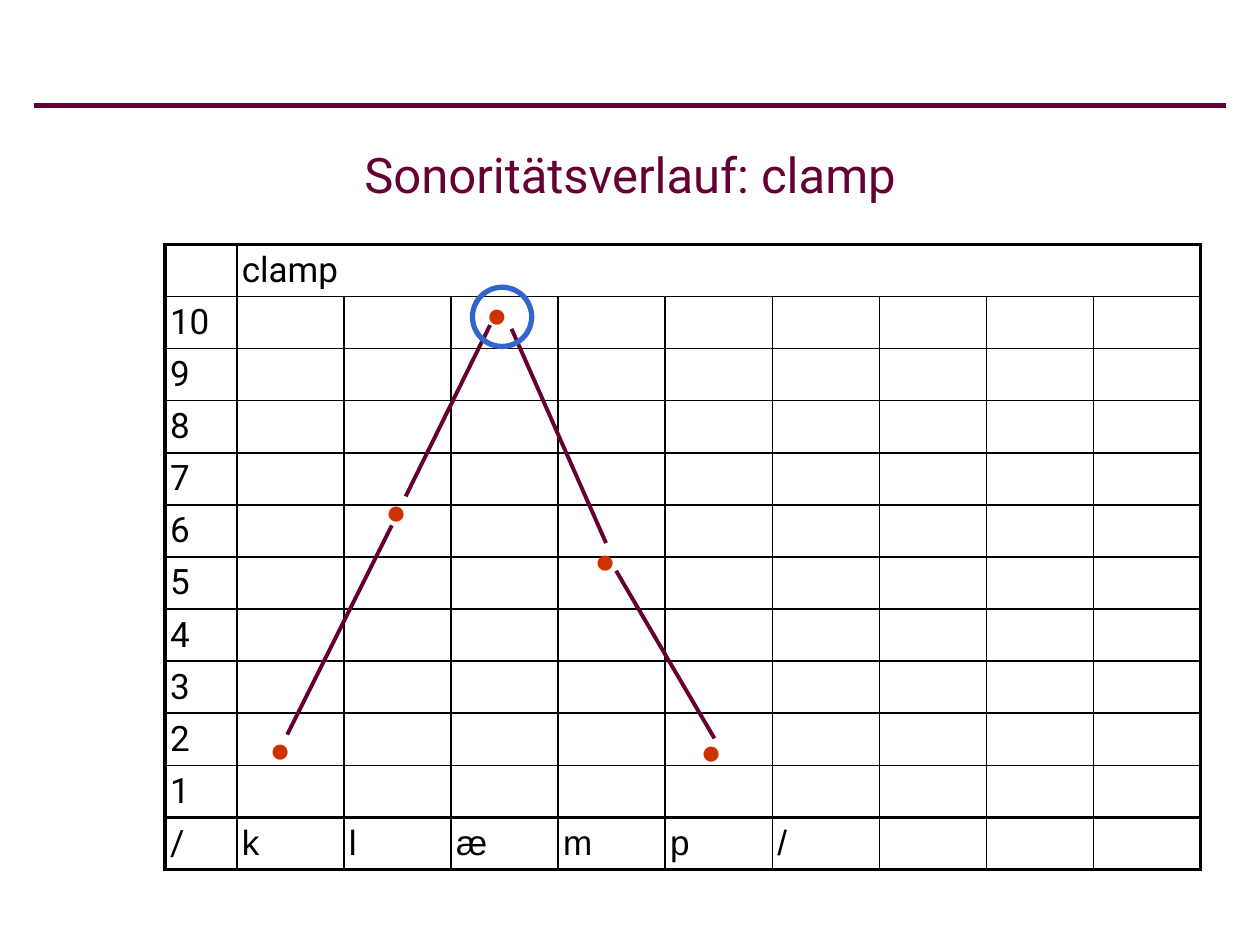
from dataclasses import dataclass

from lxml import etree
from pptx import Presentation
from pptx.dml.color import RGBColor
from pptx.enum.shapes import MSO_CONNECTOR, MSO_SHAPE
from pptx.enum.text import MSO_ANCHOR, PP_ALIGN
from pptx.oxml.ns import qn
from pptx.util import Inches, Pt

STRAIGHT = MSO_CONNECTOR.STRAIGHT
ELLIPSE = MSO_SHAPE.OVAL
MIDDLE = MSO_ANCHOR.MIDDLE
CENTER = PP_ALIGN.CENTER
LEFT = PP_ALIGN.LEFT


@dataclass(frozen=True)
class Theme:
    plum: str = "660033"
    black: str = "000000"
    dot: str = "CC3300"
    peak: str = "3366CC"
    heading_font: str = "Roboto"
    sound_font: str = "Arial"
    title_size: float = 28
    body_size: float = 20
    rule: float = 3
    slope: float = 2.25
    frame: float = 2.25
    grid: float = 1


THEME = Theme()

WORD = "clamp"
SOUNDS = ["/", "k", "l", "æ", "m", "p", "/"]
LEVELS = range(10, 0, -1)
COLUMNS = 10
LABEL_WIDTH, SOUND_WIDTH, ROW_HEIGHT = 0.57, 0.85, 0.41
CELL_MARGIN = 0.04

# Offsets from the top left corner of the grid
DOTS = [(0.83, 3.87), (1.75, 1.98), (2.55, 0.42), (3.41, 2.37), (4.25, 3.89)]
SLOPES = [
    ((0.97, 3.89), (1.8, 2.23)),
    ((1.91, 2), (2.58, 0.64)),
    ((3.5, 2.37), (2.75, 0.67)),
    ((4.36, 3.92), (3.58, 2.59)),
]
PEAK = (2.44, 0.34, 0.47)


def write(frame, text, size, font, color, align=LEFT):
    paragraph = frame.paragraphs[0]
    paragraph.alignment = align
    run = paragraph.add_run()
    run.text = text
    for name, value in {"size": Pt(size), "name": font}.items():
        setattr(run.font, name, value)
    run.font.color.rgb = RGBColor.from_string(color)
    return paragraph


def set_margins(holder, margin):
    for side in ("left", "right", "top", "bottom"):
        setattr(holder, f"margin_{side}", Inches(margin))


def add_line(shapes, start, end, color, width):
    line = shapes.add_connector(STRAIGHT, *map(Inches, (*start, *end)))
    line.line.color.rgb = RGBColor.from_string(color)
    line.line.width = Pt(width)
    etree.SubElement(line._element.spPr, qn("a:effectLst"))


def add_heading(shapes, left, top, width, height):
    add_line(shapes, (left, top), (left + width, top), THEME.plum, THEME.rule)
    title = shapes.add_textbox(*map(Inches, (left, top, width, height))).text_frame
    title.word_wrap = True
    title.vertical_anchor = MIDDLE
    write(title, f"Sonoritätsverlauf: {WORD}", THEME.title_size,
          THEME.heading_font, THEME.plum, CENTER)


def set_borders(cell, heavy_sides):
    properties = cell._tc.get_or_add_tcPr()
    for side in "LRTB":
        width = THEME.frame if side in heavy_sides else THEME.grid
        border = etree.SubElement(properties, qn(f"a:ln{side}"), w=str(Pt(width)))
        fill = etree.SubElement(border, qn("a:solidFill"))
        etree.SubElement(fill, qn("a:srgbClr"), val=THEME.black)


def add_sonority_grid(shapes, left, top):
    """Levels run down the first column, the sounds along the last row."""
    rows = [["", WORD], *([str(level)] for level in LEVELS), SOUNDS]
    last_row, last_column = len(rows) - 1, COLUMNS - 1
    width = LABEL_WIDTH + last_column * SOUND_WIDTH
    table = shapes.add_table(
        len(rows), COLUMNS,
        *map(Inches, (left, top, width, len(rows) * ROW_HEIGHT))).table
    table.first_row = table.horz_banding = False
    for index, column in enumerate(table.columns):
        column.width = Inches(SOUND_WIDTH if index else LABEL_WIDTH)
    for row in table.rows:
        row.height = Inches(ROW_HEIGHT)
    table.cell(0, 1).merge(table.cell(0, last_column))

    for r, texts in enumerate(rows):
        for c in range(COLUMNS):
            cell = table.cell(r, c)
            heavy = {"L": c == 0, "R": c == last_column or (r == 0 and c == 1),
                     "T": r in (0, last_row), "B": r >= last_row - 1}
            set_borders(cell, [side for side, on in heavy.items() if on])
            cell.fill.background()
            set_margins(cell, CELL_MARGIN)
            cell.vertical_anchor = MIDDLE
            if c < len(texts) and texts[c]:
                is_sound = r == last_row and c > 0
                font = THEME.sound_font if is_sound else THEME.heading_font
                write(cell.text_frame, texts[c], THEME.body_size, font, THEME.black)


def add_sonority_curve(shapes, left, top):
    curve = shapes.add_group_shape().shapes
    for x, y in DOTS:
        box = curve.add_textbox(*map(Inches, (left + x, top + y, 0.28, 0.3)))
        dot = box.text_frame
        dot.word_wrap = True
        set_margins(dot, 0)
        write(dot, "●", THEME.body_size, THEME.sound_font, THEME.dot).line_spacing = 0.9
    for (x1, y1), (x2, y2) in SLOPES:
        add_line(curve, (left + x1, top + y1), (left + x2, top + y2),
                 THEME.plum, THEME.slope)


def add_peak_ring(shapes, left, top):
    x, y, size = PEAK
    ring = shapes.add_shape(ELLIPSE, *map(Inches, (left + x, top + y, size, size)))
    ring.shadow.inherit = False
    ring.fill.background()
    ring.line.color.rgb = RGBColor.from_string(THEME.peak)
    ring.line.width = Pt(THEME.rule)


def main():
    presentation = Presentation()
    presentation.slide_width, presentation.slide_height = Inches(10), Inches(7.5)
    shapes = presentation.slides.add_slide(presentation.slide_layouts[6]).shapes
    add_heading(shapes, 0.27, 0.84, 9.46, 1.08)
    grid_corner = (1.31, 1.94)
    add_sonority_grid(shapes, *grid_corner)
    add_sonority_curve(shapes, *grid_corner)
    add_peak_ring(shapes, *grid_corner)
    presentation.save("out.pptx")


if __name__ == "__main__":
    main()
